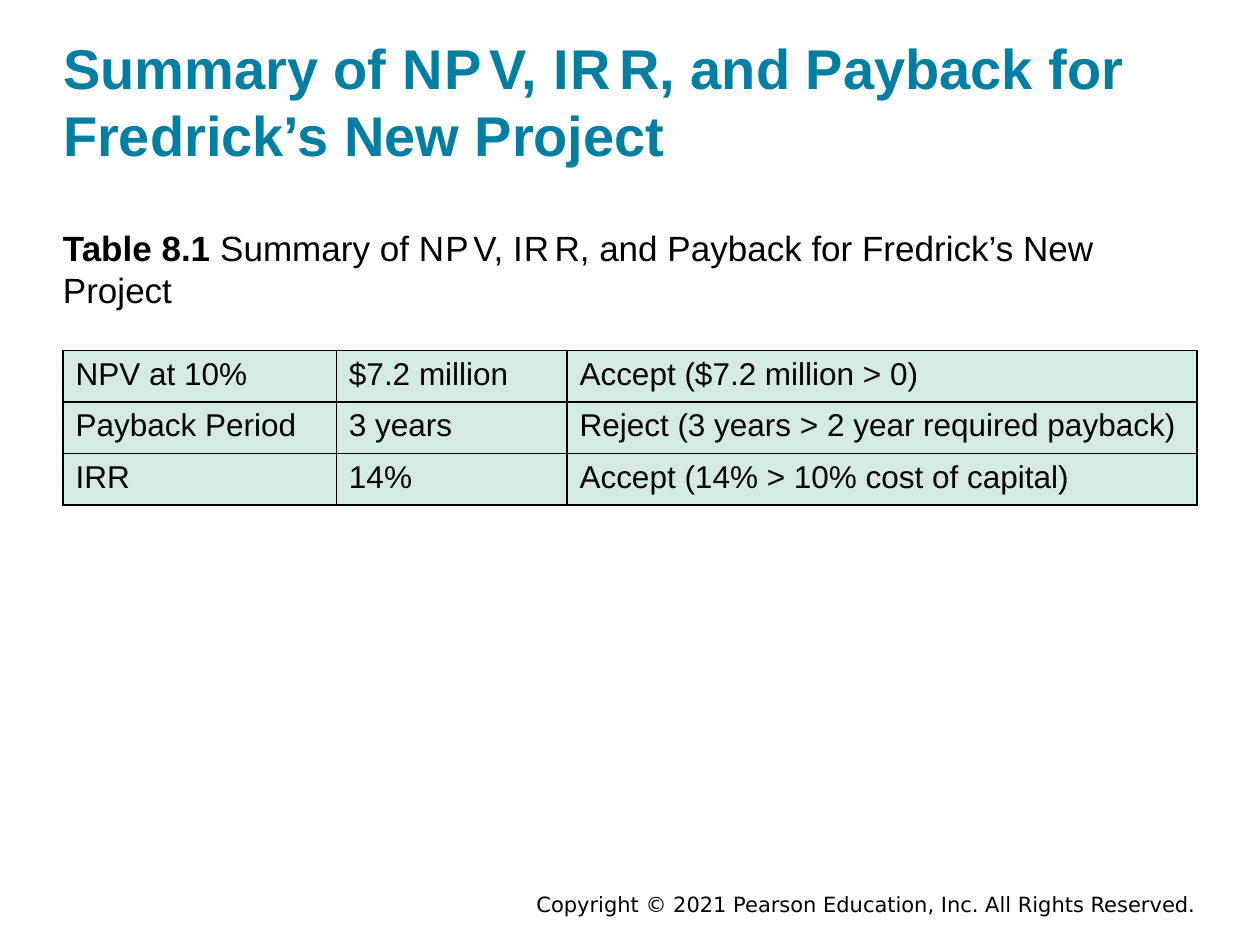
from lxml import etree
from pptx import Presentation
from pptx.dml.color import RGBColor
from pptx.enum.text import MSO_ANCHOR, PP_ALIGN
from pptx.oxml.ns import qn
from pptx.util import Inches, Pt

TEAL = RGBColor(0x00, 0x7F, 0xA3)
BLACK = RGBColor(0x00, 0x00, 0x00)
MINT = RGBColor(0xD4, 0xEA, 0xE4)
LEFT, RIGHT = PP_ALIGN.LEFT, PP_ALIGN.RIGHT
TOP, BOTTOM = MSO_ANCHOR.TOP, MSO_ANCHOR.BOTTOM

MARGIN, CONTENT_WIDTH = 0.5, 9
COLUMN_WIDTHS = (2.17, 1.83, 5)
ROW_HEIGHT = 0.41
ROWS = (
    ("NPV at 10%", "$7.2 million", "Accept ($7.2 million > 0)"),
    ("Payback Period", "3 years", "Reject (3 years > 2 year required payback)"),
    ("IRR", "14%", "Accept (14% > 10% cost of capital)"),
)
# Text and whether its letters are drawn together
SUMMARY = (
    ("Summary of ", False),
    ("N P ", True),
    ("V, ", False),
    ("I R ", True),
    ("R, and Payback for Fredrick’s New Project", False),
)


def add_span(para, text, size, color=BLACK, bold=False, font="Arial"):
    span = para.add_run()
    span.text = text
    span.font.name = font
    span.font.size = Pt(size)
    span.font.bold = bold
    span.font.color.rgb = color
    return span


def add_summary(para, size, color, bold):
    """Write the summary wording, tightening the acronyms by an eighth of the size."""
    for text, tight in SUMMARY:
        span = add_span(para, text, size, color, bold)
        if tight:
            span.font._element.set("spc", str(round(-size / 8 * 100)))


def prepare_frame(shape, anchor):
    frame = shape.text_frame
    frame.word_wrap = True
    frame.vertical_anchor = anchor
    frame.margin_left = frame.margin_right = 0
    frame.margin_top = frame.margin_bottom = 0
    para = frame.paragraphs[0]
    para.alignment = LEFT
    return para


def place_title(page, left, top, width, height):
    title = page.shapes.title
    title.left, title.top = Inches(left), Inches(top)
    title.width, title.height = Inches(width), Inches(height)
    add_summary(prepare_frame(title, BOTTOM), 32, TEAL, True)


def add_caption(page, left, top, width, height):
    box = page.shapes.add_textbox(Inches(left), Inches(top), Inches(width), Inches(height))
    para = prepare_frame(box, TOP)
    add_span(para, "Table 8.1 ", 20, bold=True)
    add_summary(para, 20, BLACK, False)


def add_borders(cell):
    properties = cell._tc.get_or_add_tcPr()
    for position, side in enumerate(("a:lnL", "a:lnR", "a:lnT", "a:lnB")):
        line = etree.Element(qn(side), w=str(Pt(1)))
        fill = etree.SubElement(line, qn("a:solidFill"))
        etree.SubElement(fill, qn("a:srgbClr"), val=str(BLACK))
        properties.insert(position, line)


def add_results(page, left, top, width, height):
    table = page.shapes.add_table(
        len(ROWS), len(COLUMN_WIDTHS),
        Inches(left), Inches(top), Inches(width), Inches(height),
    ).table
    table.first_row = table.horz_banding = False
    for column, column_width in zip(table.columns, COLUMN_WIDTHS):
        column.width = Inches(column_width)
    for row, texts in zip(table.rows, ROWS):
        row.height = Inches(height / len(ROWS))
        for cell, text in zip(row.cells, texts):
            cell.fill.solid()
            cell.fill.fore_color.rgb = MINT
            add_span(cell.text_frame.paragraphs[0], text, 18)
            add_borders(cell)


def add_footer(page, left, top, width, height):
    box = page.shapes.add_textbox(Inches(left), Inches(top), Inches(width), Inches(height))
    box.text_frame.word_wrap = True
    para = box.text_frame.paragraphs[0]
    para.alignment = RIGHT
    add_span(
        para, "Copyright © 2021 Pearson Education, Inc. All Rights Reserved.",
        12, font="DejaVu Sans",
    )


def main():
    deck = Presentation()
    deck.slide_width, deck.slide_height = Inches(10), Inches(7.5)
    page = deck.slides.add_slide(deck.slide_layouts[5])
    add_footer(page, 3.92, 7.03, 5.67, 0.3)
    place_title(page, MARGIN, 0.13, CONTENT_WIDTH, 1.2)
    add_caption(page, MARGIN, 1.8, CONTENT_WIDTH, 0.75)
    add_results(page, MARGIN, 2.78, CONTENT_WIDTH, ROW_HEIGHT * len(ROWS))
    deck.save("out.pptx")


if __name__ == "__main__":
    main()
